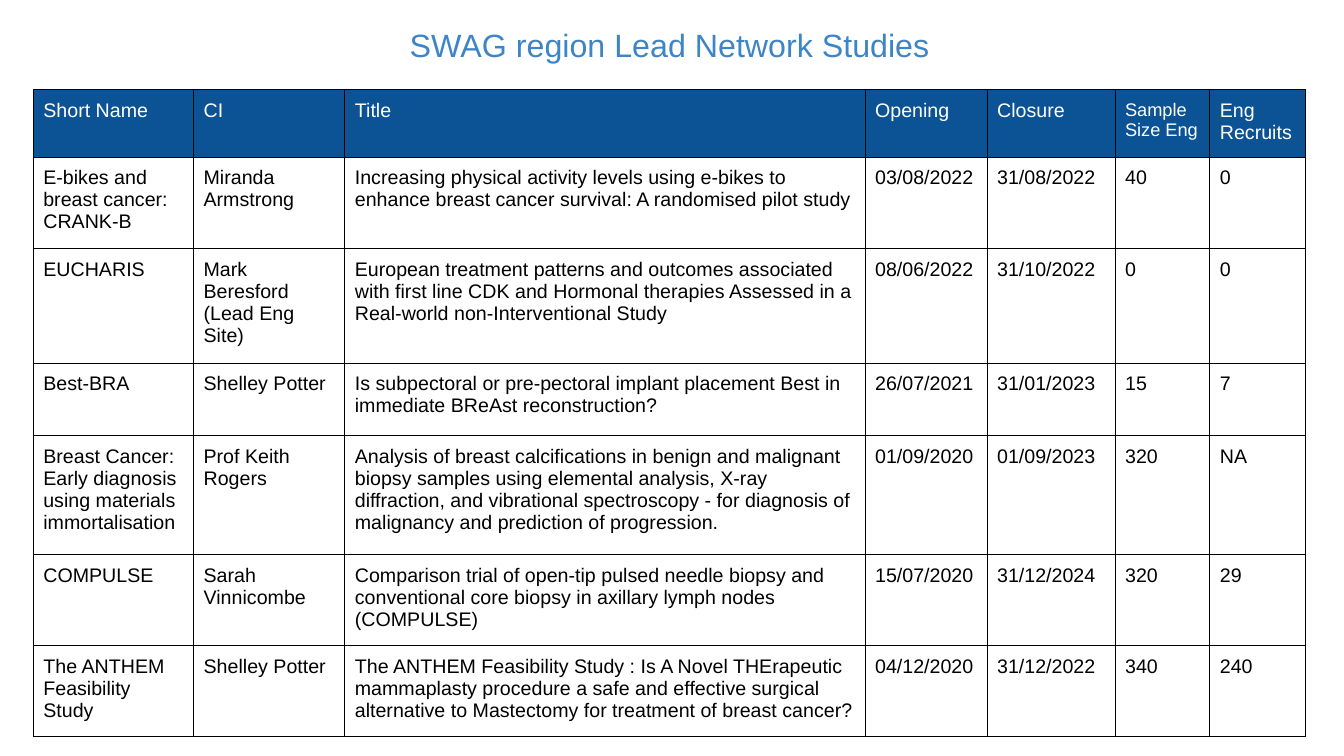
from lxml.etree import SubElement
from pptx import Presentation
from pptx.dml.color import RGBColor
from pptx.enum.text import MSO_AUTO_SIZE, PP_ALIGN
from pptx.oxml.ns import qn
from pptx.util import Inches, Pt

WHITE = RGBColor(0xFF, 0xFF, 0xFF)
BLACK = RGBColor(0x00, 0x00, 0x00)
NAVY = RGBColor(0x0B, 0x53, 0x94)
SKY = RGBColor(0x3D, 0x85, 0xC6)

COLS = [1.59, 1.5, 5.16, 1.21, 1.27, 0.94, 0.95]
ROWS = [0.57, 0.91, 1.07, 0.72, 1.18, 0.82, 0.89]
STUDIES = [
    ["Short Name", "CI", "Title", "Opening", "Closure", "Sample Size Eng", "Eng Recruits"],
    ["E-bikes and breast cancer: CRANK-B", "Miranda Armstrong",
     "Increasing physical activity levels using e-bikes to enhance breast cancer "
     "survival: A randomised pilot study",
     "03/08/2022", "31/08/2022", "40", "0"],
    ["EUCHARIS", "Mark Beresford (Lead Eng Site)",
     "European treatment patterns and outcomes associated with first line CDK and "
     "Hormonal therapies Assessed in a Real-world non-Interventional Study",
     "08/06/2022", "31/10/2022", "0", "0"],
    ["Best-BRA", "Shelley Potter",
     "Is subpectoral or pre-pectoral implant placement Best in immediate BReAst "
     "reconstruction?",
     "26/07/2021", "31/01/2023", "15", "7"],
    ["Breast Cancer: Early diagnosis using materials immortalisation", "Prof Keith Rogers",
     "Analysis of breast calcifications in benign and malignant biopsy samples using "
     "elemental analysis, X-ray diffraction, and vibrational spectroscopy - for "
     "diagnosis of malignancy and prediction of progression.",
     "01/09/2020", "01/09/2023", "320", "NA"],
    ["COMPULSE", "Sarah Vinnicombe",
     "Comparison trial of open-tip pulsed needle biopsy and conventional core biopsy "
     "in axillary lymph nodes (COMPULSE)",
     "15/07/2020", "31/12/2024", "320", "29"],
    ["The ANTHEM Feasibility Study", "Shelley Potter",
     "The ANTHEM Feasibility Study : Is A Novel THErapeutic mammaplasty procedure a "
     "safe and effective surgical alternative to Mastectomy for treatment of breast "
     "cancer?",
     "04/12/2020", "31/12/2022", "340", "240"],
]


def write(frame, text, size, color):
    """Add one Arial run to the first paragraph and return the paragraph."""
    para = frame.paragraphs[0]
    run = para.add_run()
    run.text = text
    run.font.name = "Arial"
    run.font.size = Pt(size)
    run.font.color.rgb = color
    return para


def border(cell):
    """Draw thin black lines on all four sides; call before setting the fill."""
    props = cell._tc.get_or_add_tcPr()
    for side in ("lnL", "lnR", "lnT", "lnB"):
        line = SubElement(props, qn(f"a:{side}"), w=str(Pt(0.75)))
        fill = SubElement(line, qn("a:solidFill"))
        SubElement(fill, qn("a:srgbClr"), val=str(BLACK))


prs = Presentation()
prs.slide_width = Inches(13.33)
prs.slide_height = Inches(7.5)
slide = prs.slides.add_slide(prs.slide_layouts[6])

title = slide.shapes.add_textbox(Inches(0.17), Inches(0.15), Inches(12.95), Inches(0.59))
frame = title.text_frame
frame.word_wrap = True
frame.auto_size = MSO_AUTO_SIZE.SHAPE_TO_FIT_TEXT
frame.margin_left = frame.margin_right = Inches(0.1)
frame.margin_top = frame.margin_bottom = Inches(0.1)
write(frame, "SWAG region Lead Network Studies", 23, SKY).alignment = PP_ALIGN.CENTER

table = slide.shapes.add_table(
    len(ROWS), len(COLS), Inches(0.33), Inches(0.89),
    Inches(sum(COLS)), Inches(sum(ROWS))).table
for col, width in zip(table.columns, COLS):
    col.width = Inches(width)
for row, height in zip(table.rows, ROWS):
    row.height = Inches(height)

for r, study in enumerate(STUDIES):
    head = r == 0
    for c, text in enumerate(study):
        cell = table.cell(r, c)
        cell.margin_left = cell.margin_right = Inches(0.1)
        cell.margin_top = cell.margin_bottom = Inches(0.1)
        border(cell)
        cell.fill.solid()
        cell.fill.fore_color.rgb = NAVY if head else WHITE
        size = 13 if text == "Sample Size Eng" else 14
        write(cell.text_frame, text, size, WHITE if head else BLACK)

prs.save("out.pptx")
